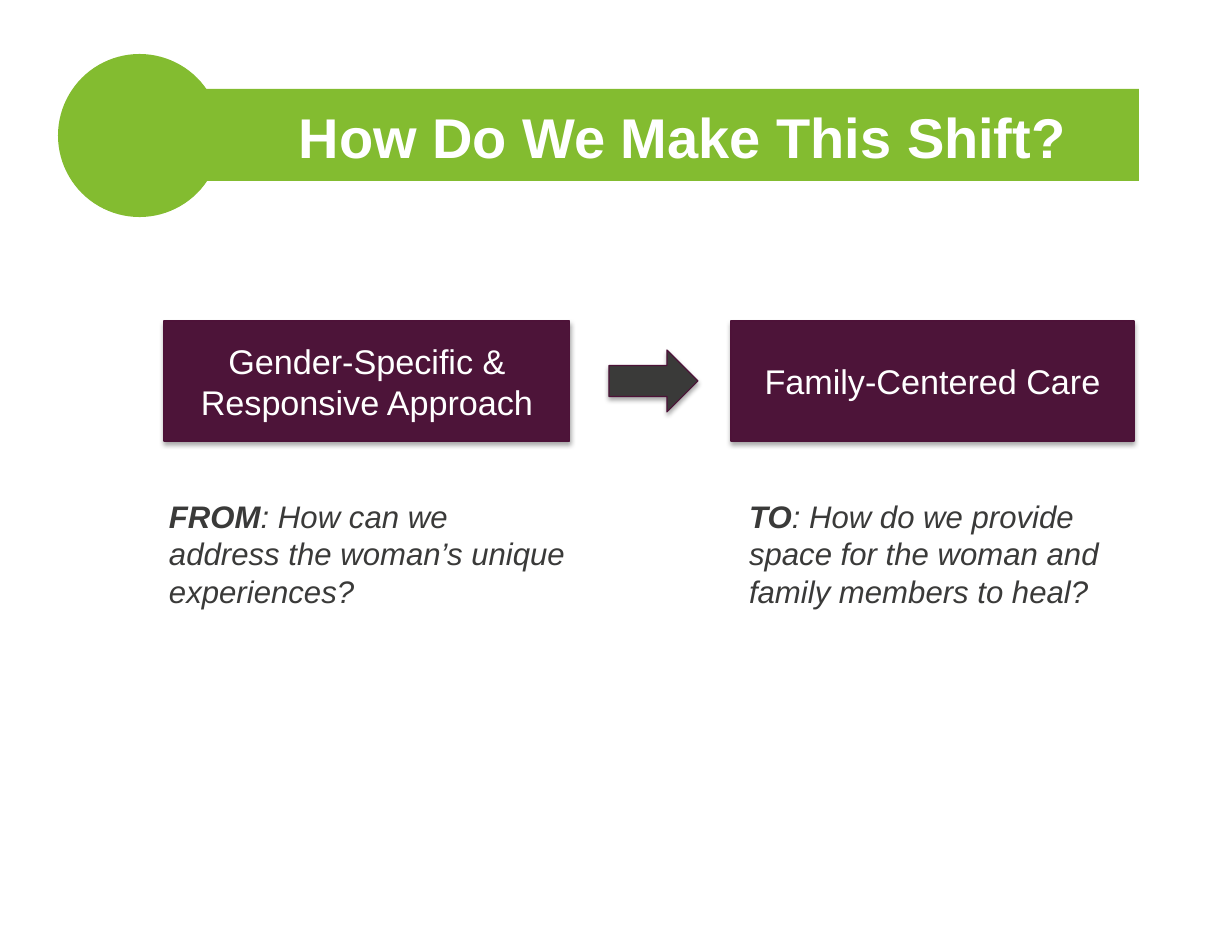
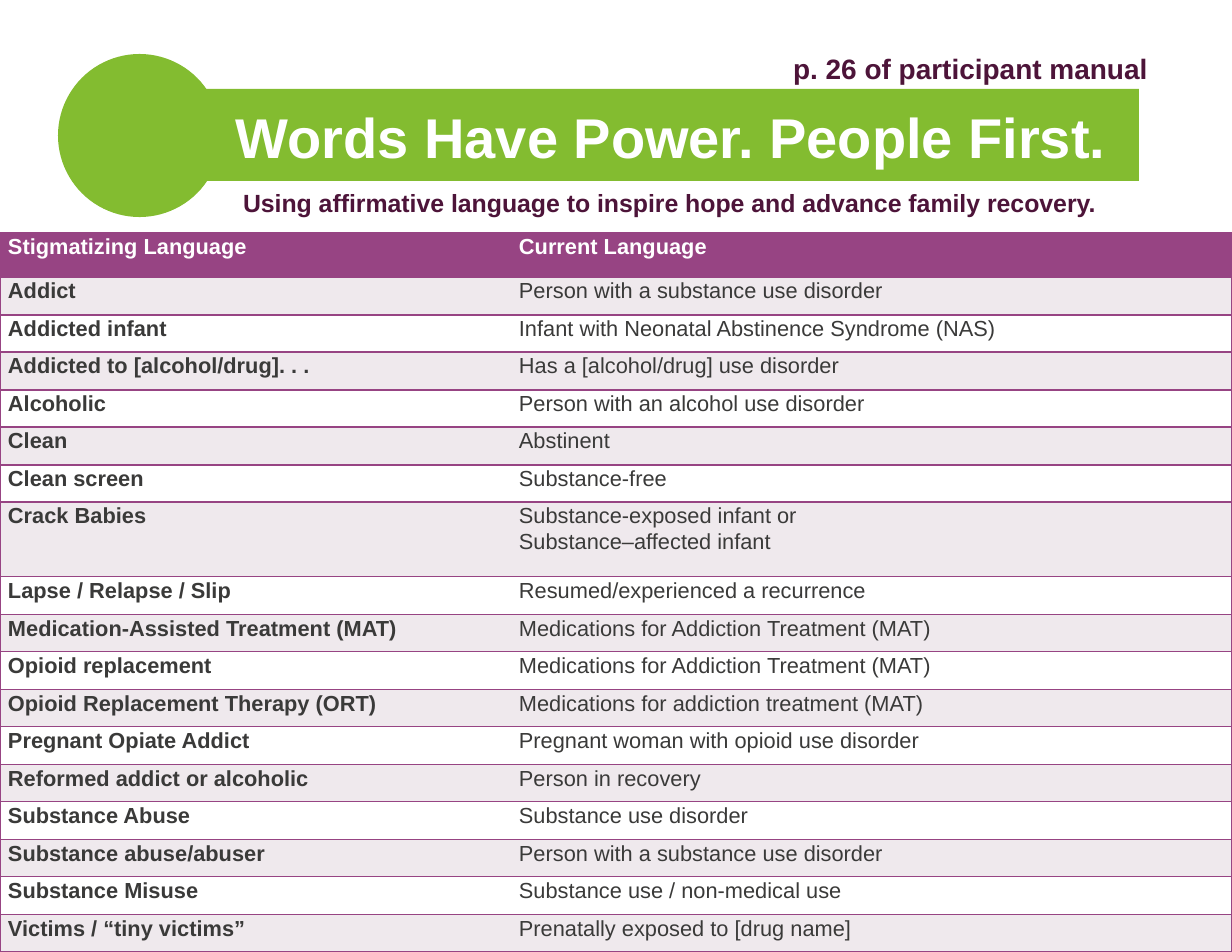
from lxml.etree import SubElement
from pptx import Presentation
from pptx.dml.color import RGBColor
from pptx.enum.shapes import MSO_SHAPE
from pptx.enum.text import MSO_ANCHOR, MSO_AUTO_SIZE, PP_ALIGN
from pptx.oxml.ns import qn
from pptx.util import Pt

SCALE = 914400 / 112
GREEN, PLUM, EDGE = "83BC30", "4D1439", "4D1238"
GREY, WHITE, MAUVE, PALE = "3A3A39", "FFFFFF", "974483", "EFE9ED"
hue = RGBColor.from_string


def box(*sizes):
    """Turn px lengths into EMU."""
    return [round(size * SCALE) for size in sizes]


def write(para, text, ink, **form):
    """Add one run to a paragraph."""
    run = para.add_run()
    run.text = text
    run.font.name = "Arial"
    run.font.color.rgb = hue(ink)
    for key, value in form.items():
        setattr(run.font, key, value)


deck = Presentation()
deck.slide_width, deck.slide_height = box(1232, 952)
shift = deck.slides.add_slide(deck.slide_layouts[5])
words = deck.slides.add_slide(deck.slide_layouts[1])

# Green band and disc, shared through the master
tree = deck.slide_master.shapes._spTree
bands = [
    (MSO_SHAPE.RECTANGLE, (193, 89, 946, 92)),
    (MSO_SHAPE.FLOWCHART_CONNECTOR, (58, 54, 163, 163)),
]
for spot, (kind, place) in enumerate(bands, 2):
    band = shift.shapes.add_shape(kind, *box(*place))
    band.shadow.inherit = False
    band.fill.solid()
    band.fill.fore_color.rgb = hue(GREEN)
    band.line.fill.background()
    tree.insert(spot, band._element)

# Titles and the subtitle
body = words.placeholders[1]
heads = [
    (shift.shapes.title, (198, 95, 969, 82), "How Do We Make This Shift?", WHITE, 36),
    (words.shapes.title, (198, 95, 946, 82), "Words Have Power. People First.", WHITE, 36),
    (body, (230, 181, 939, 41),
     "Using affirmative language to inspire hope and advance family recovery.", PLUM, 16),
]
for head, place, text, ink, size in heads:
    head.left, head.top, head.width, head.height = box(*place)
    frame = head.text_frame
    frame.auto_size = MSO_AUTO_SIZE.NONE
    frame.margin_left, frame.margin_top, frame.margin_right, frame.margin_bottom = box(13, 7, 13, 7)
    para = frame.paragraphs[0]
    para.space_before = Pt(0)
    if head is body:
        props = para._p.get_or_add_pPr()
        props.set("marL", "0")
        props.set("indent", "0")
        SubElement(props, qn("a:buNone"))
    else:
        para.alignment = PP_ALIGN.CENTER
        frame.vertical_anchor = MSO_ANCHOR.MIDDLE
    write(para, text, ink, size=Pt(size), bold=True)

# From one approach to the other
steps = [
    (MSO_SHAPE.RECTANGLE, (164, 321, 406, 120), PLUM, "Gender-Specific & Responsive Approach"),
    (MSO_SHAPE.RECTANGLE, (731, 321, 403, 120), PLUM, "Family-Centered Care"),
    (MSO_SHAPE.RIGHT_ARROW, (609, 350, 89, 62), GREY, ""),
]
for kind, place, fill, text in steps:
    step = shift.shapes.add_shape(kind, *box(*place))
    step.fill.solid()
    step.fill.fore_color.rgb = hue(fill)
    step.line.color.rgb = hue(EDGE)
    step.line.width = Pt(0.75)
    step.shadow.inherit = False
    glow = SubElement(step._element.spPr.find(qn("a:effectLst")), qn("a:outerShdw"),
                      blurRad="40000", dist="23000", dir="5400000", rotWithShape="0")
    shade = SubElement(glow, qn("a:srgbClr"), val="000000")
    SubElement(shade, qn("a:alpha"), val="35000")
    if text:
        step.text_frame.vertical_anchor = MSO_ANCHOR.MIDDLE
        para = step.text_frame.paragraphs[0]
        para.alignment = PP_ALIGN.CENTER
        write(para, text, WHITE, size=Pt(22))

asks = [
    ((158, 492, 419, 124), "FROM", ": How can we address the woman’s unique experiences?"),
    ((738, 492, 390, 124), "TO",
     ": How do we provide space for the woman and family members to heal?"),
]
for place, lead, rest in asks:
    frame = shift.shapes.add_textbox(*box(*place)).text_frame
    frame.word_wrap = True
    for text, bold in ((lead, True), (rest, False)):
        write(frame.paragraphs[0], text, GREY, size=Pt(20), bold=bold, italic=True)

# Table of terms
terms = [
    ("Stigmatizing Language", "Current Language"),
    ("Addict", "Person with a substance use disorder"),
    ("Addicted infant", "Infant with Neonatal Abstinence Syndrome (NAS)"),
    ("Addicted to [alcohol/drug]. . .", "Has a [alcohol/drug] use disorder"),
    ("Alcoholic", "Person with an alcohol use disorder"),
    ("Clean", "Abstinent"),
    ("Clean screen", "Substance-free"),
    ("Crack Babies", "Substance-exposed infant or\nSubstance–affected infant"),
    ("Lapse / Relapse / Slip", "Resumed/experienced a recurrence"),
    ("Medication-Assisted Treatment (MAT)", "Medications for Addiction Treatment (MAT)"),
    ("Opioid replacement", "Medications for Addiction Treatment (MAT)"),
    ("Opioid Replacement Therapy (ORT)", "Medications for addiction treatment (MAT)"),
    ("Pregnant Opiate Addict", "Pregnant woman with opioid use disorder"),
    ("Reformed addict or alcoholic", "Person in recovery"),
    ("Substance Abuse", "Substance use disorder"),
    ("Substance abuse/abuser", "Person with a substance use disorder"),
    ("Substance Misuse", "Substance use / non-medical use"),
    ("Victims / “tiny victims”", "Prenatally exposed to [drug name]"),
]
highs = [44] + [38, 37] * 3 + [75] + [38, 37] * 5
table = words.shapes.add_table(len(terms), 2, *box(0, 233, 1232, sum(highs))).table
# Plain style without grid lines
table._tbl.tblPr.find(qn("a:tableStyleId")).text = "{2D5ABB26-0587-4C30-8999-92F81FD0307C}"
for col, wide in zip(table.columns, box(511, 721)):
    col.width = wide
for row, high in zip(table.rows, box(*highs)):
    row.height = high

for r, pair in enumerate(terms):
    for c, text in enumerate(pair):
        cell = table.cell(r, c)
        cell.margin_left, cell.margin_right = box(8, 8)
        cell.margin_top = cell.margin_bottom = 0
        props = cell._tc.get_or_add_tcPr()
        for side in (("lnL", "lnT", "lnB"), ("lnR", "lnT", "lnB"))[c]:
            edge = SubElement(props, qn("a:" + side), w="12700")
            SubElement(SubElement(edge, qn("a:solidFill")), qn("a:srgbClr"), val=MAUVE)
        cell.fill.solid()
        cell.fill.fore_color.rgb = hue(MAUVE if r == 0 else PALE if r % 2 else WHITE)
        frame = cell.text_frame
        for n, line in enumerate(text.split("\n")):
            para = frame.add_paragraph() if n else frame.paragraphs[0]
            para.line_spacing = 1.07
            write(para, line, GREY if r else WHITE, size=Pt(14), bold=r == 0 or c == 0)

note = words.shapes.add_textbox(*box(782, 46, 381, 45)).text_frame
note.word_wrap = False
write(note.paragraphs[0], "p. 26 of participant manual", PLUM, size=Pt(18), bold=True)

deck.save("out.pptx")
